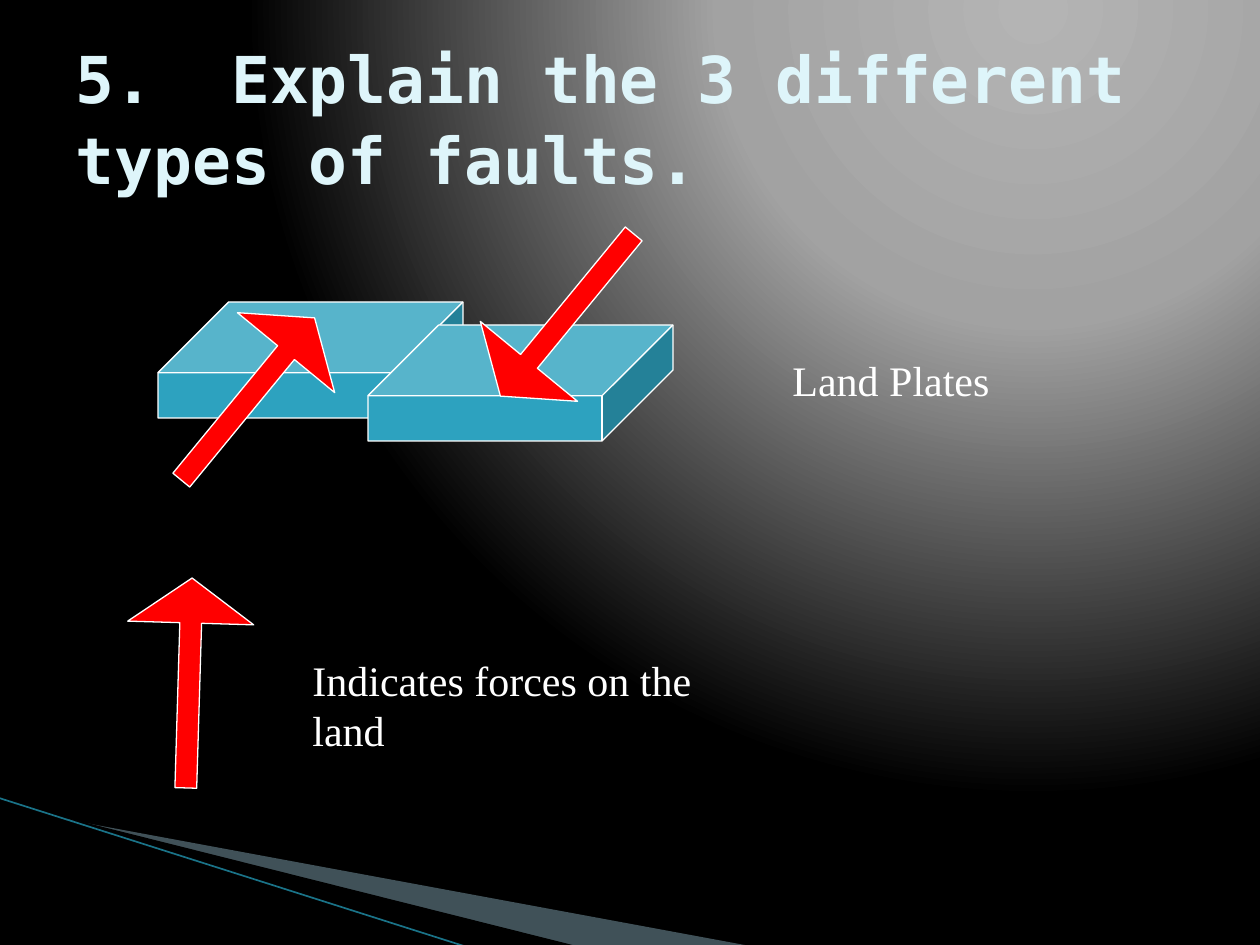
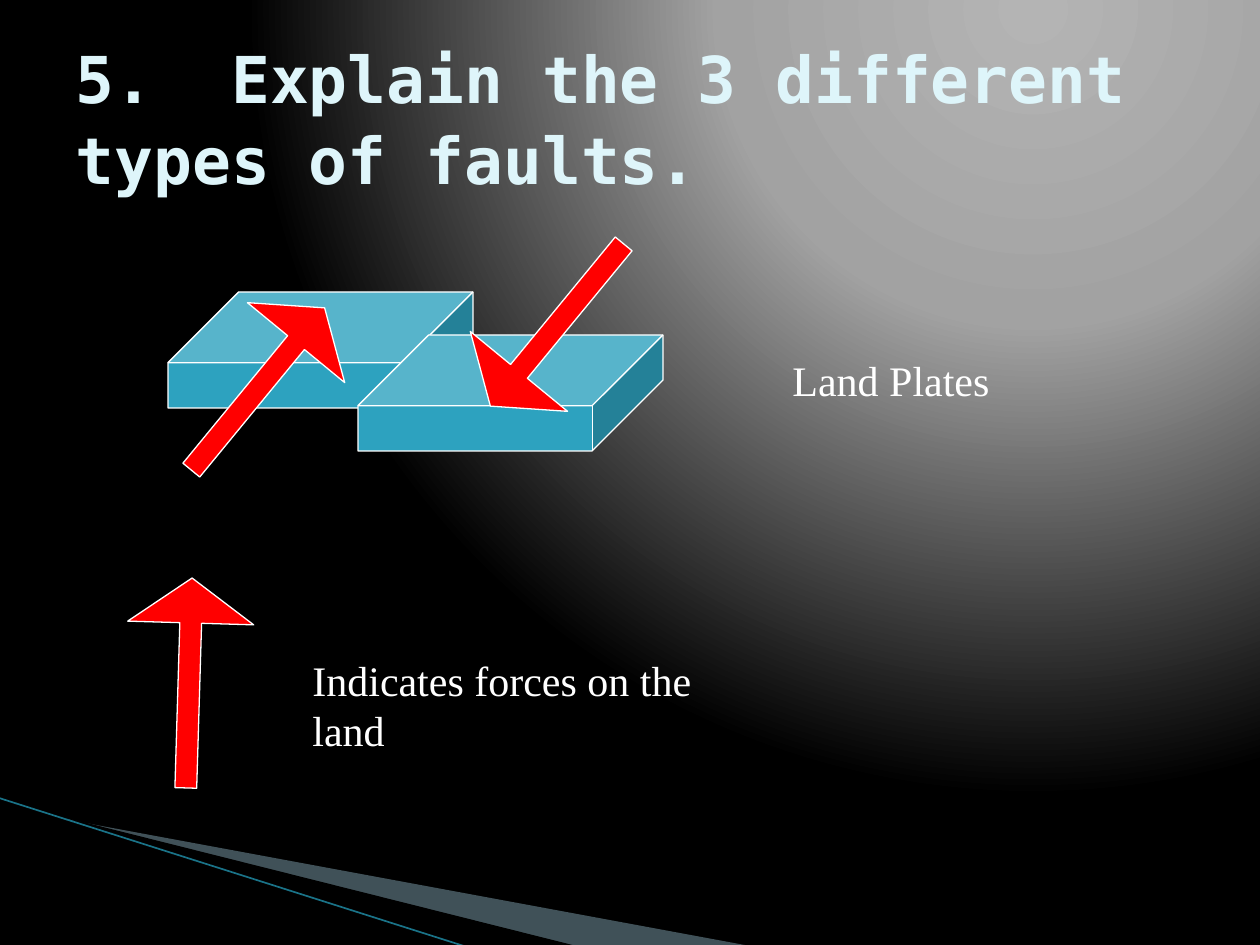
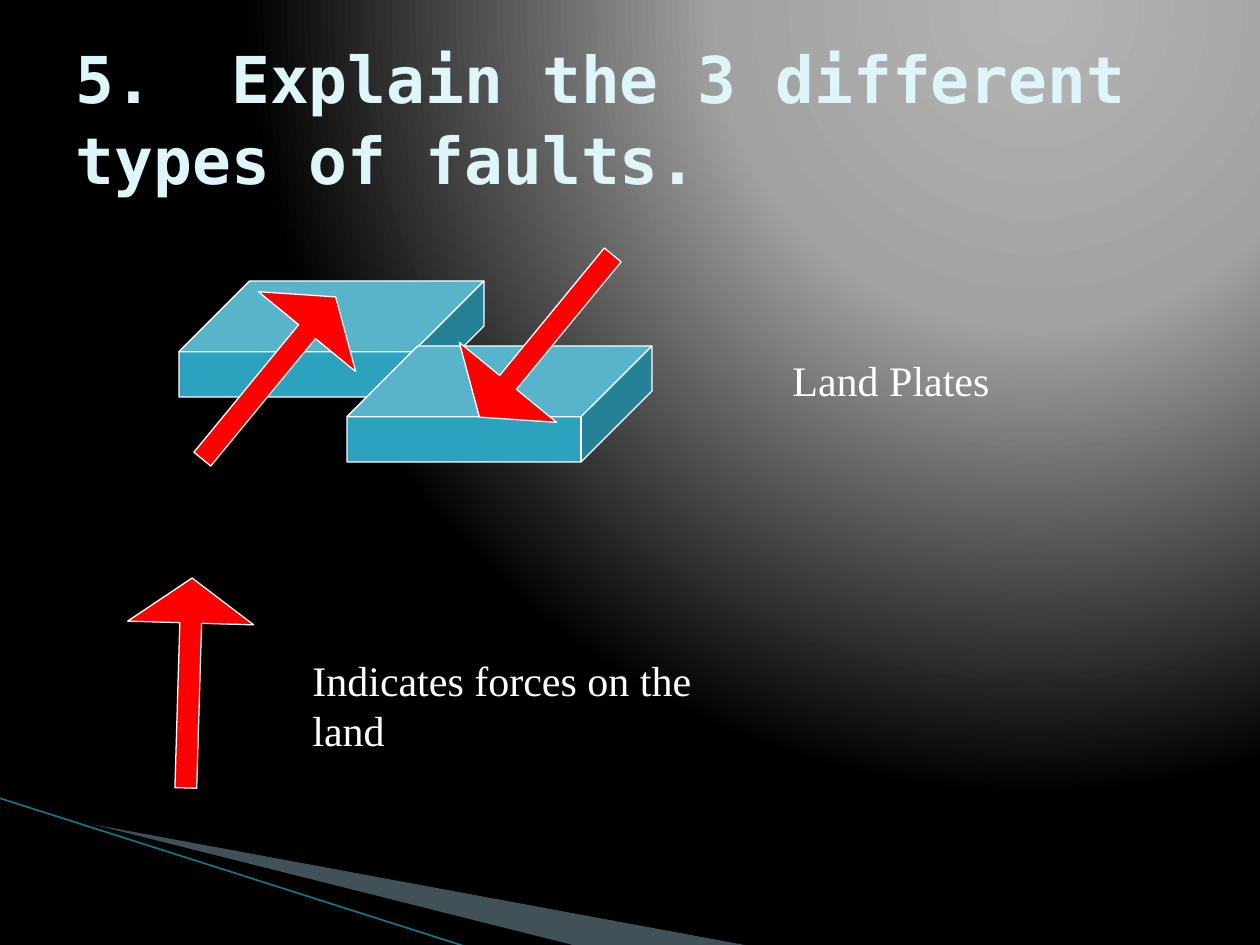
"""Build three slides that show land plates sliding along a fault."""
import dataclasses

import pptx
import pptx.dml.color
import pptx.enum.shapes
import pptx.enum.text
import pptx.oxml
import pptx.oxml.ns
import pptx.util

PX = 914400 / 126
SHAPE = pptx.enum.shapes.MSO_SHAPE
SIZE = pptx.enum.text.MSO_AUTO_SIZE


@dataclasses.dataclass(frozen=True)
class Theme:
    """Colours, fonts and type sizes of the deck."""
    black: str = "000000"
    white: str = "FFFFFF"
    plate: str = "2DA2BF"
    force: str = "FF0000"
    wedge: str = "A0CBDC"
    rule: str = "1A7388"
    title: str = "DEF5FA"
    glow: tuple = ((0, "B4B4B4"), (40, "A2A2A2"), (100, "000000"))
    head: str = "DejaVu Sans Mono"
    body: str = "Times New Roman"
    big: float = 36.9
    text: float = 24
    edge: float = 0.75
    thin: float = 0.95


THEME = Theme()
WIDE, HIGH = 1260, 945
TITLE = "5.  Explain the 3 different types of faults."


def emu(*lens):
    """Turn px lengths into EMU."""
    return [pptx.util.Emu(round(n * PX)) for n in lens]


def rgb(code):
    """Return the colour for a hex code."""
    return pptx.dml.color.RGBColor.from_string(code)


def paint(shape, fill, line=None):
    """Give a shape a flat fill, an optional edge and no shadow."""
    shape.shadow.inherit = False
    shape.fill.solid()
    shape.fill.fore_color.rgb = rgb(fill)
    if line:
        shape.line.color.rgb = rgb(line)
        shape.line.width = pptx.util.Pt(THEME.edge)
    else:
        shape.line.fill.background()


def write(frame, text, font, size, color, bold=False):
    """Add one styled run to the first paragraph of a frame."""
    run = frame.paragraphs[0].add_run()
    run.text = text
    run.font.name = font
    run.font.size = pptx.util.Pt(size)
    run.font.bold = bold
    run.font.color.rgb = rgb(color)


def glow(master):
    """Fill the master background with a round gradient."""
    master.background.fill.solid()
    props = master.element.find(".//" + pptx.oxml.ns.qn("p:bgPr"))
    stops = "".join(f'<a:gs pos="{at * 1000}"><a:srgbClr val="{code}"/></a:gs>'
                    for at, code in THEME.glow)
    fill = pptx.oxml.parse_xml(
        f'<a:gradFill {pptx.oxml.ns.nsdecls("a")} rotWithShape="1">'
        f'<a:gsLst>{stops}</a:gsLst><a:path path="circle">'
        '<a:fillToRect l="65000" t="0" r="0" b="98000"/></a:path></a:gradFill>')
    props.replace(props[0], fill)


def wedge(shapes, points, fill):
    """Draw a closed outline through px points."""
    pen = shapes.build_freeform(*points[0], scale=PX)
    pen.add_line_segments(points[1:], close=True)
    shape = pen.convert_to_shape()
    paint(shape, fill)
    return shape


def bands(slide):
    """Draw the corner bands and move them to the layout."""
    shapes = slide.shapes
    pale = wedge(shapes, [(69, 820), (750, 946), (575, 946), (69, 819)],
                 THEME.wedge)
    color = pale.element.find(".//" + pptx.oxml.ns.qn("a:srgbClr"))
    color.append(pptx.oxml.parse_xml(
        f'<a:alpha {pptx.oxml.ns.nsdecls("a")} val="40000"/>'))
    dark = wedge(shapes, [(67, 818), (576, 946), (469, 947), (68, 819)],
                 THEME.black)
    line = shapes.add_connector(pptx.enum.shapes.MSO_CONNECTOR.STRAIGHT,
                                *emu(-1, 798, 467, 947))
    line.line.color.rgb = rgb(THEME.rule)
    line.line.width = pptx.util.Pt(THEME.thin)
    props = line.element.find(pptx.oxml.ns.qn("p:spPr"))
    props.append(pptx.oxml.parse_xml(
        f'<a:effectLst {pptx.oxml.ns.nsdecls("a")}/>'))
    tree = slide.slide_layout.shapes.element
    for spot, part in enumerate((pale, dark, line), 2):
        tree.insert(spot, part.element)


def head(slide, box):
    """Place and style the slide title."""
    title = slide.shapes.title
    title.left, title.top, title.width, title.height = emu(*box)
    frame = title.text_frame
    frame.word_wrap = True
    frame.auto_size = SIZE.NONE
    frame.vertical_anchor = pptx.enum.text.MSO_ANCHOR.MIDDLE
    first = frame.paragraphs[0]
    first.alignment = pptx.enum.text.PP_ALIGN.LEFT
    first.line_spacing = 1.04
    write(frame, TITLE, THEME.head, THEME.big, THEME.title, True)


def force(shapes, left, top, turn):
    """Draw a red force arrow turned by some degrees."""
    arrow = shapes.add_shape(SHAPE.RIGHT_ARROW, *emu(left, top, 210, 126))
    arrow.adjustments[0], arrow.adjustments[1] = 0.173, 0.357
    arrow.rotation = turn
    paint(arrow, THEME.force, THEME.white)


def plate(slide, left, top, shift, turn):
    """Group a land plate with the force arrow at a shift from it."""
    group = slide.shapes.add_group_shape()
    cube = group.shapes.add_shape(SHAPE.CUBE, *emu(left, top, 305, 116))
    cube.adjustments[0] = 0.61
    paint(cube, THEME.plate, THEME.white)
    force(group.shapes, left + shift[0], top + shift[1], turn)


def label(slide, text, box):
    """Write a one-line label."""
    frame = slide.shapes.add_textbox(*emu(*box)).text_frame
    frame.word_wrap = False
    frame.auto_size = SIZE.SHAPE_TO_FIT_TEXT
    write(frame, text, THEME.body, THEME.text, THEME.white)


def fault(slide, left, top, slip):
    """Draw both plates, slid apart by a slip, and their label."""
    plate(slide, left + slip, top + 50 - slip, (-15, 34), 309.4)
    label(slide, "Land Plates", (left + 622, top + 96, 222, 63))
    plate(slide, left + 210 - slip, top + 73 + slip, (94, -73), 129.4)


def key(slide, left, top):
    """Explain the arrow."""
    force(slide.shapes, left, top, 271.7)
    label(slide, "Indicates forces on the land",
          (left + 216, top + 28, 486, 63))


def main():
    """Build and save the deck."""
    deck = pptx.Presentation()
    deck.slide_width, deck.slide_height = emu(WIDE, HIGH)
    glow(deck.slide_master)
    layout = deck.slide_layouts[5]
    for step in range(3):
        slide = deck.slides.add_slide(layout)
        if step == 0:
            bands(slide)
        head(slide, (63, 38, 1134, 157))
        fault(slide, 158, 252, 21 * step // 2)
        key(slide, 84, 620)
    deck.save("out.pptx")


if __name__ == "__main__":
    main()
